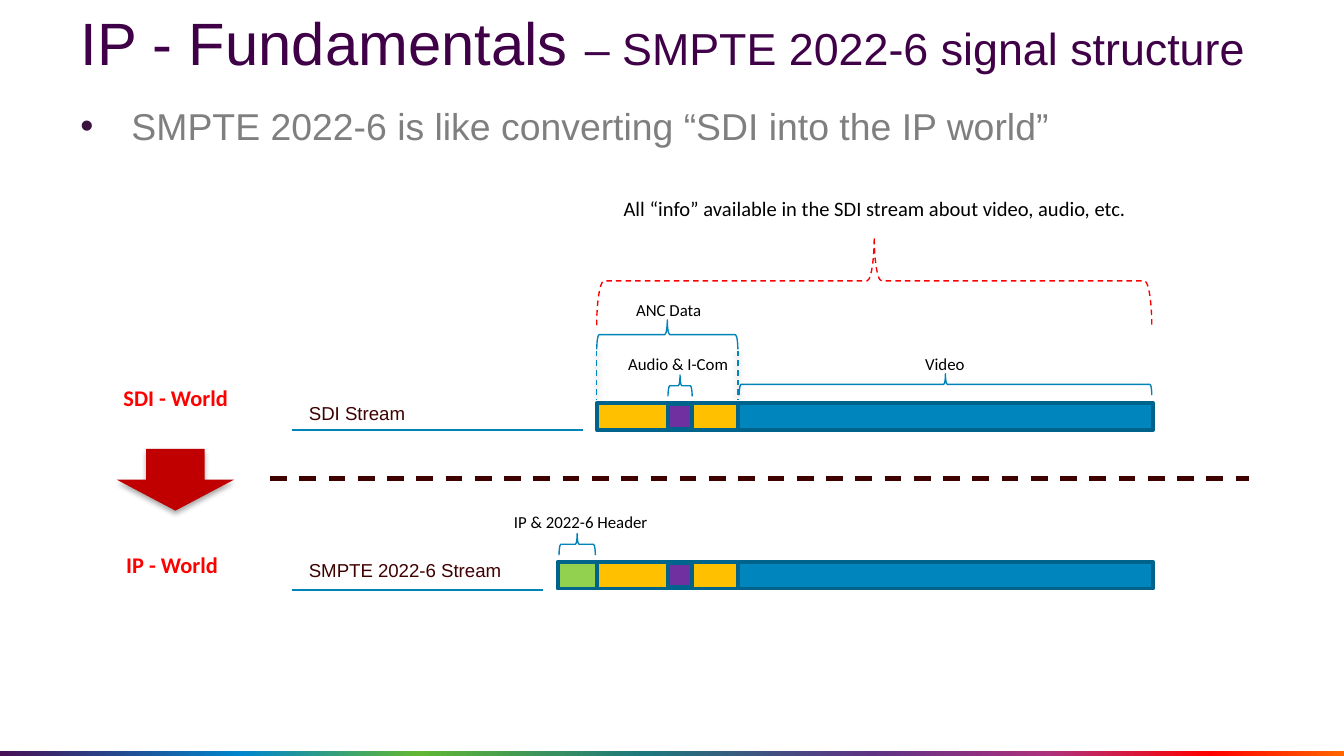
"""Build the slide that compares an SDI stream with its SMPTE 2022-6 packet."""
from dataclasses import dataclass

from lxml.etree import SubElement
from pptx import Presentation
from pptx.dml.color import RGBColor
from pptx.enum.dml import MSO_LINE
from pptx.enum.shapes import MSO_CONNECTOR, MSO_SHAPE
from pptx.enum.text import MSO_ANCHOR, MSO_AUTO_SIZE, PP_ALIGN
from pptx.oxml.ns import qn
from pptx.util import Pt

PX = 9144


@dataclass(frozen=True)
class Theme:
    heading_font: str = "Arial"
    label_font: str = "Calibri"
    title: str = "3F0047"
    body: str = "7F7F7F"
    bullet: str = "3A123E"
    black: str = "000000"
    maroon: str = "3F0000"
    red: str = "FF0000"
    arrow: str = "C00000"
    brace: str = "0083B9"
    video: str = "0086BD"
    outline: str = "00638C"
    ancillary: str = "FFC000"
    audio: str = "7030A0"
    header: str = "92D050"
    rainbow: tuple = (
        (0, "481056"), (18, "0086CC"), (31, "61B733"), (48, "1D777C"),
        (65, "603285"), (78, "AE317D"), (90, "FF0000"), (100, "FF6600"),
    )
    title_size: int = 32
    subtitle_size: int = 24
    body_size: int = 20
    world_size: int = 12
    info_size: int = 11
    stream_size: int = 10
    label_size: int = 9


def add_run(paragraph, text, font, size, color, bold=False):
    run = paragraph.add_run()
    run.text = text
    run.font.name = font
    run.font.size = Pt(size)
    run.font.bold = bold
    run.font.color.rgb = RGBColor.from_string(color)


def add_shadow(effects, opacity):
    shadow = SubElement(effects, qn("a:outerShdw"), blurRad=str(Pt(3.1)),
                        dist=str(Pt(1.7)), dir="5400000", rotWithShape="0")
    color = SubElement(shadow, qn("a:srgbClr"), val=theme.black)
    SubElement(color, qn("a:alpha"), val=str(opacity * 1000))


theme = Theme()
presentation = Presentation()
presentation.slide_width = 1000 * PX
presentation.slide_height = presentation.slide_width * 9 // 16
slide = presentation.slides.add_slide(presentation.slide_layouts[5])
shapes = slide.shapes

rainbow = shapes.add_shape(MSO_SHAPE.RECTANGLE, 0, 559 * PX, 1000 * PX, 5 * PX)
rainbow.shadow.inherit = False
rainbow.line.fill.background()
rainbow.fill.gradient()
rainbow.fill.gradient_angle = 0
stops = rainbow._element.spPr.find(".//" + qn("a:gsLst"))
stops.clear()
for position, color in theme.rainbow:
    stop = SubElement(stops, qn("a:gs"), pos=str(position * 1000))
    SubElement(stop, qn("a:srgbClr"), val=color)

title = shapes.title
title.left, title.top, title.width, title.height = 50 * PX, 0, 900 * PX, 84 * PX
frame = title.text_frame
frame.auto_size = MSO_AUTO_SIZE.NONE
frame.word_wrap = True
frame.vertical_anchor = MSO_ANCHOR.TOP
frame.margin_top = 4 * PX
paragraph = frame.paragraphs[0]
paragraph.alignment = PP_ALIGN.LEFT
add_run(paragraph, "IP - Fundamentals ", theme.heading_font, theme.title_size, theme.title)
add_run(paragraph, "– SMPTE 2022-6 signal structure", theme.heading_font,
        theme.subtitle_size, theme.title)

body = shapes.add_textbox(50 * PX, 73 * PX, 900 * PX, 86 * PX)
body.text_frame.word_wrap = True
body.text_frame.margin_top = 4 * PX
paragraph = body.text_frame.paragraphs[0]
properties = paragraph._p.get_or_add_pPr()
properties.set("marL", str(38 * PX))
properties.set("indent", str(-38 * PX))
bullet_color = SubElement(properties, qn("a:buClr"))
SubElement(bullet_color, qn("a:srgbClr"), val=theme.bullet)
SubElement(properties, qn("a:buFont"), typeface=theme.heading_font)
SubElement(properties, qn("a:buChar"), char="•")
add_run(paragraph, "SMPTE 2022-6 is like converting “SDI into the IP world”",
        theme.heading_font, theme.body_size, theme.body)

sdi_top, ip_top = 300, 418
blocks = [(415, ip_top, 30, 20, theme.header)]
for top in (sdi_top, ip_top):
    blocks += [
        (548, top, 310, 20, theme.video),
        (444, top, 105, 20, theme.ancillary),
        (497, top + 1, 18, 18, theme.audio),
    ]
for left, top, width, height, color in blocks:
    block = shapes.add_shape(MSO_SHAPE.RECTANGLE, left * PX, top * PX, width * PX, height * PX)
    block.shadow.inherit = False
    block.fill.solid()
    block.fill.fore_color.rgb = RGBColor.from_string(color)
    block.line.color.rgb = RGBColor.from_string(theme.outline)
    block.line.width = Pt(2)

braces = [
    (416, 397, 27, 16, theme.brace, MSO_LINE.SOLID),
    (444, 238, 105, 22, theme.brace, MSO_LINE.SOLID),
    (550, 278, 307, 16, theme.brace, MSO_LINE.SOLID),
    (497, 279, 18, 16, theme.brace, MSO_LINE.SOLID),
    (444, 176, 413, 66, theme.red, MSO_LINE.DASH),
]
for left, top, span, depth, color, dash in braces:
    shift = (span - depth) * PX // 2
    brace = shapes.add_shape(MSO_SHAPE.RIGHT_BRACE, left * PX + shift, top * PX - shift,
                             depth * PX, span * PX)
    brace.rotation = 270
    brace.shadow.inherit = False
    brace.fill.background()
    brace.line.color.rgb = RGBColor.from_string(color)
    brace.line.width = Pt(0.75)
    brace.line.dash_style = dash

lines = [
    (201, 356, 929, 356, theme.maroon, 2.25, MSO_LINE.DASH, False),
    (434, 320, 217, 320, theme.brace, 0.75, MSO_LINE.SOLID, False),
    (404, 439, 217, 439, theme.brace, 0.75, MSO_LINE.SOLID, False),
    (444, 261, 444, 297, theme.video, 0.75, MSO_LINE.DASH, True),
    (549, 261, 549, 297, theme.video, 0.75, MSO_LINE.DASH, True),
]
for start_x, start_y, end_x, end_y, color, weight, dash, shadowed in lines:
    line = shapes.add_connector(MSO_CONNECTOR.STRAIGHT, start_x * PX, start_y * PX,
                                end_x * PX, end_y * PX)
    line.line.color.rgb = RGBColor.from_string(color)
    line.line.width = Pt(weight)
    line.line.dash_style = dash
    effects = SubElement(line._element.spPr, qn("a:effectLst"))
    if shadowed:
        add_shadow(effects, 38)

center, left_side = PP_ALIGN.CENTER, PP_ALIGN.LEFT
small = (theme.label_font, theme.label_size, theme.black)
info = (theme.label_font, theme.info_size, theme.black)
world = (theme.label_font, theme.world_size, theme.red, True)
stream = (theme.heading_font, theme.stream_size, theme.maroon)
labels = [
    ("ANC Data", 463, 218, 69, 25, center, small),
    ("Video", 678, 258, 50, 25, center, small),
    ("IP & 2022-6 Header", 372, 376, 120, 25, center, small),
    ("Audio & I-Com", 457, 258, 95, 25, center, small),
    ("All “info” available in the SDI stream about video, audio, etc.",
     436, 141, 430, 29, center, info),
    ("SDI - World", 82, 281, 99, 30, left_side, world),
    ("IP - World", 84, 405, 89, 30, left_side, world),
    ("SDI Stream", 220, 294, 92, 27, left_side, stream),
    ("SMPTE 2022-6 Stream", 220, 411, 164, 27, left_side, stream),
]
for text, left, top, width, height, alignment, style in labels:
    label = shapes.add_textbox(left * PX, top * PX, width * PX, height * PX)
    label.text_frame.word_wrap = False
    label.text_frame.auto_size = MSO_AUTO_SIZE.SHAPE_TO_FIT_TEXT
    paragraph = label.text_frame.paragraphs[0]
    paragraph.alignment = alignment
    add_run(paragraph, text, *style)

arrow = shapes.add_shape(MSO_SHAPE.DOWN_ARROW, 87 * PX, 334 * PX, 87 * PX, 46 * PX)
arrow.fill.solid()
arrow.fill.fore_color.rgb = RGBColor.from_string(theme.arrow)
arrow.line.fill.background()
arrow.shadow.inherit = False
add_shadow(arrow._element.spPr.find(qn("a:effectLst")), 35)

presentation.save("out.pptx")
